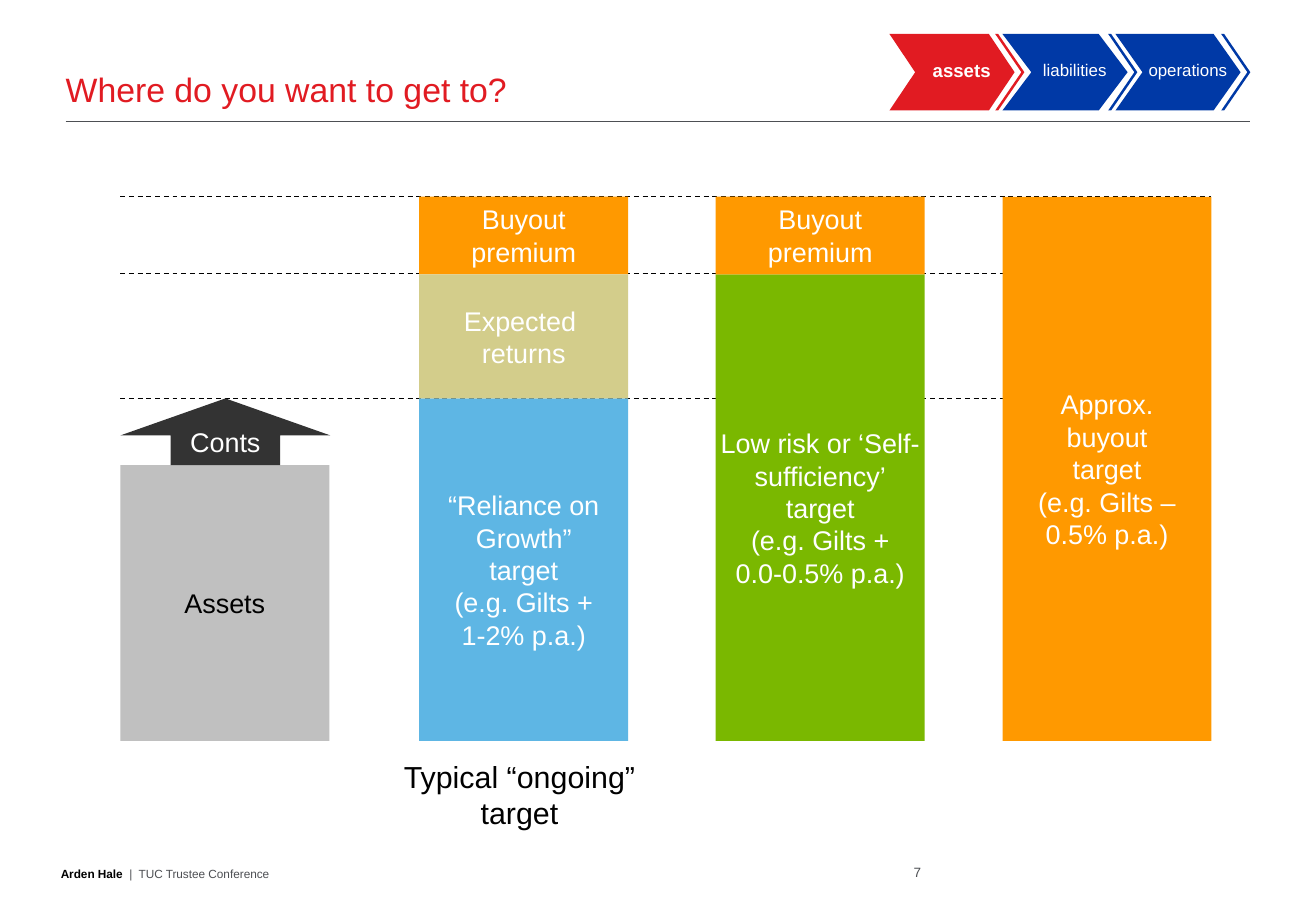
from lxml import etree
from pptx import Presentation
from pptx.dml.color import RGBColor
from pptx.enum.dml import MSO_LINE
from pptx.enum.shapes import MSO_CONNECTOR, MSO_SHAPE
from pptx.enum.text import MSO_ANCHOR, PP_ALIGN
from pptx.oxml.ns import qn
from pptx.util import Inches, Pt

STRAIGHT = MSO_CONNECTOR.STRAIGHT
DASH = MSO_LINE.DASH
RECTANGLE, CHEVRON, UP_ARROW = MSO_SHAPE.RECTANGLE, MSO_SHAPE.CHEVRON, MSO_SHAPE.UP_ARROW
TOP, MIDDLE, BOTTOM = MSO_ANCHOR.TOP, MSO_ANCHOR.MIDDLE, MSO_ANCHOR.BOTTOM
LEFT, CENTER, RIGHT = PP_ALIGN.LEFT, PP_ALIGN.CENTER, PP_ALIGN.RIGHT

WHITE = RGBColor(0xFF, 0xFF, 0xFF)
BLACK = RGBColor(0x00, 0x00, 0x00)
GREY = RGBColor(0x4D, 0x4F, 0x53)
SILVER = RGBColor(0xC0, 0xC0, 0xC0)
CHARCOAL = RGBColor(0x33, 0x33, 0x33)
RED = RGBColor(0xE1, 0x1B, 0x22)
NAVY = RGBColor(0x00, 0x39, 0xA6)
SKY = RGBColor(0x5E, 0xB6, 0xE4)
ORANGE = RGBColor(0xFF, 0x99, 0x00)
SAND = RGBColor(0xD3, 0xCD, 0x8B)
GREEN = RGBColor(0x7A, 0xB8, 0x00)

FONT = "Arial"
TITLE = "Where do you want to get to?"
CAPTION = "Typical “ongoing”\ntarget"
FOOTER = [("Arden Hale", BLACK, True), ("  |  TUC Trustee Conference", GREY, False)]
PAGE_NUMBER = "7"

STEPS = [
    ("assets", RED, 11, True, 0.336),
    ("liabilities", NAVY, 10, False, 0.377),
    ("operations", NAVY, 10, False, 0.353),
]
STEP_LEFT, STEP_PITCH, STEP_TOP, STEP_HEIGHT = 7.32, 0.93, 0.28, 0.63

BUYOUT, SELF_SUFFICIENT, FUNDED, BASE = 1.62, 2.26, 3.28, 6.1
ASSETS_TOP, ASSETS_LEFT, BAR_WIDTH = 3.83, 0.99, 1.72
LEVELS = [FUNDED, 2.25, BUYOUT]
BARS = [
    (3.45, FUNDED, BASE, SKY, WHITE, MIDDLE, 0.1,
     "“Reliance on Growth”\ntarget\n(e.g. Gilts +\n1-2% p.a.)"),
    (3.45, BUYOUT, SELF_SUFFICIENT, ORANGE, WHITE, TOP, 0.1, "Buyout premium"),
    (3.45, SELF_SUFFICIENT, FUNDED, SAND, WHITE, MIDDLE, 0.1, "Expected \nreturns"),
    (5.89, SELF_SUFFICIENT, BASE, GREEN, WHITE, MIDDLE, 0,
     "Low risk or ‘Self-sufficiency’\ntarget\n(e.g. Gilts +\n0.0-0.5% p.a.)"),
    (5.89, BUYOUT, SELF_SUFFICIENT, ORANGE, WHITE, TOP, 0.1, "Buyout premium"),
    (8.25, BUYOUT, BASE, ORANGE, WHITE, MIDDLE, 0.1,
     "Approx.\nbuyout\ntarget\n(e.g. Gilts –\n0.5% p.a.)"),
    (ASSETS_LEFT, ASSETS_TOP, BASE, SILVER, BLACK, MIDDLE, 0.1, "Assets"),
]


def add_span(para, text, size, color, bold=False):
    """Add one formatted run to a paragraph."""
    span = para.add_run()
    span.text = text
    span.font.name = FONT
    span.font.size = Pt(size)
    span.font.bold = bold
    span.font.color.rgb = color


def write(shape, spans, size, align=CENTER, anchor=TOP, inset=(0.1, 0.05), wrap=True):
    """Fill a shape with spans of text, with line breaks at newlines."""
    frame = shape.text_frame
    frame.word_wrap = wrap
    frame.vertical_anchor = anchor
    frame.margin_left = frame.margin_right = Inches(inset[0])
    frame.margin_top = frame.margin_bottom = Inches(inset[1])
    para = frame.paragraphs[0]
    para.alignment = align
    for text, color, bold in spans:
        for index, line in enumerate(text.split("\n")):
            if index:
                para.add_line_break()
            add_span(para, line, size, color, bold)
    for line_break in para._p.findall(qn("a:br")):
        etree.SubElement(line_break, qn("a:rPr"), sz=str(size * 100))


def add_box(page, left, top, width, height):
    """Add an empty text box."""
    return page.shapes.add_textbox(Inches(left), Inches(top), Inches(width), Inches(height))


def add_block(page, kind, left, top, width, height, color, adjustments=()):
    """Add a flat filled shape without an outline."""
    block = page.shapes.add_shape(
        kind, Inches(left), Inches(top), Inches(width), Inches(height))
    block.shadow.inherit = False
    block.fill.solid()
    block.fill.fore_color.rgb = color
    block.line.fill.background()
    for index, value in enumerate(adjustments):
        block.adjustments[index] = value
    return block


def add_rule(page, left, right, top, color, dash=None):
    """Add a thin horizontal line."""
    rule = page.shapes.add_connector(
        STRAIGHT, Inches(left), Inches(top), Inches(right), Inches(top))
    rule.line.color.rgb = color
    rule.line.width = Pt(0.75)
    if dash is not None:
        rule.line.dash_style = dash
    etree.SubElement(rule._element.spPr, qn("a:effectLst"))


def add_header(page):
    """Add the title, its rule and the three-step tracker."""
    title = page.shapes.title
    title.left, title.top = Inches(0.54), Inches(0.33)
    title.width, title.height = Inches(9.75), Inches(0.57)
    write(title, [(TITLE, RED, False)], 20, LEFT, BOTTOM, (0, 0))
    add_rule(page, 0.54, 10.29, 1, GREY)
    for index, (label, color, size, bold, notch) in reversed(list(enumerate(STEPS))):
        left = STEP_LEFT + index * STEP_PITCH
        add_block(page, CHEVRON, left, STEP_TOP, 1.03, STEP_HEIGHT, color, [notch])
        add_block(page, CHEVRON, left + 0.87, STEP_TOP, 0.24, STEP_HEIGHT, color, [0.897])
        box = add_box(page, left + 0.16, 0.44, 0.87, 0.27)
        write(box, [(label, WHITE, bold)], size)


def add_bars(page):
    """Add the level lines, the stacked bars, the arrow and the caption."""
    for level in LEVELS:
        add_rule(page, ASSETS_LEFT, 9.97, level, BLACK, DASH)
    for left, top, bottom, color, ink, anchor, inset, text in BARS:
        bar = add_block(page, RECTANGLE, left, top, BAR_WIDTH, bottom - top, color)
        write(bar, [(text, ink, False)], 16, anchor=anchor, inset=(inset, 0.05))
    arrow = add_block(page, UP_ARROW, ASSETS_LEFT, FUNDED, 1.73, ASSETS_TOP - FUNDED,
                      CHARCOAL, [0.521, 0.555])
    write(arrow, [("Conts", WHITE, False)], 16, anchor=MIDDLE)
    write(add_box(page, 2.03, 6.19, 4.49, 0.7), [(CAPTION, BLACK, False)], 18)


def add_footer(page):
    """Add the footer text and the page number."""
    write(add_box(page, 0.5, 6.92, 4.98, 0.33), FOOTER, 7, LEFT, BOTTOM, (0, 0))
    write(add_box(page, 7.23, 6.92, 0.35, 0.33), [(PAGE_NUMBER, GREY, False)], 8,
          RIGHT, BOTTOM, (0, 0), False)


def main():
    """Build the slide and save the deck."""
    deck = Presentation()
    deck.slide_width, deck.slide_height = Inches(10.83), Inches(7.5)
    page = deck.slides.add_slide(deck.slide_layouts[5])
    add_header(page)
    add_bars(page)
    add_footer(page)
    deck.save("out.pptx")


if __name__ == "__main__":
    main()
